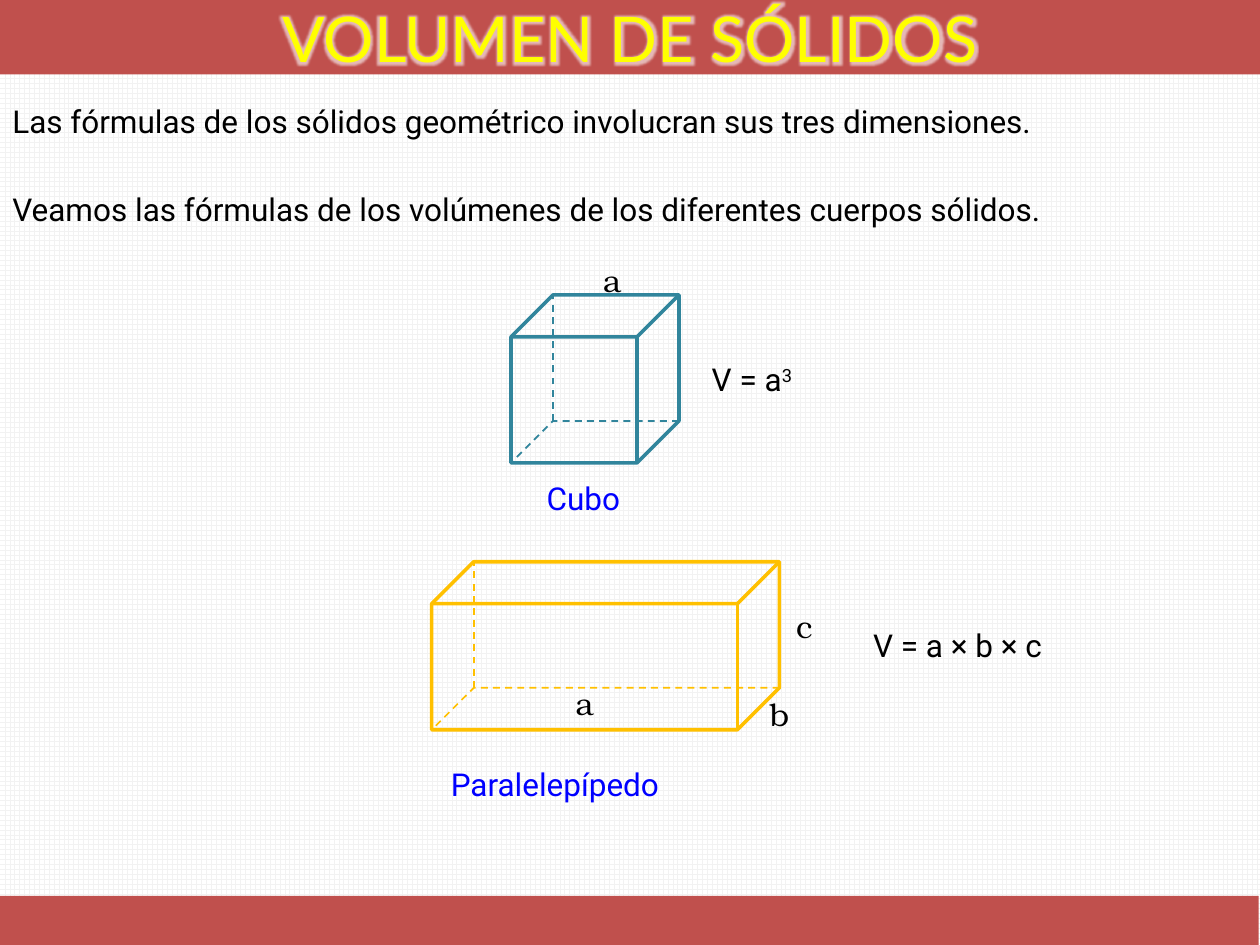
from lxml import etree
from pptx import Presentation
from pptx.dml.color import RGBColor
from pptx.enum import dml, shapes, text
from pptx.oxml import ns
from pptx.util import Pt

HUES = {
    "red": "C0504D", "sun": "FFFF00", "ink": "000000", "blue": "0000FF",
    "teal": "31859C", "gold": "FFC000", "grid": "F2F2F2", "white": "FFFFFF",
}
FACES = {"head": "Lato", "main": "Roboto", "math": "TeX Gyre Bonum"}


def hue(name):
    return RGBColor.from_string(HUES[name])


def apply(item, form):
    for key, val in form.items():
        setattr(item, key, val)


def paint(node, name, alpha=None):
    fill = etree.SubElement(node, ns.qn("a:solidFill"))
    tone = etree.SubElement(fill, ns.qn("a:srgbClr"), val=HUES[name])
    if alpha:
        etree.SubElement(tone, ns.qn("a:alpha"), val=alpha)
    return fill


class Page:
    def __init__(self, deck):
        self.slide = deck.slides.add_slide(deck.slide_layouts[6])
        self.home = self.slide.shapes

    def ground(self):
        fill = self.slide.background.fill
        fill.patterned()
        fill.pattern = dml.MSO_PATTERN.LARGE_GRID
        fill.fore_color.rgb = hue("grid")
        fill.back_color.rgb = hue("white")

    def group(self):
        return self.slide.shapes.add_group_shape().shapes

    def run(self, para, words, face="main", tint="ink", size=18):
        run = para.add_run()
        run.text = words
        apply(run.font, {"size": Pt(size), "name": FACES[face]})
        run.font.color.rgb = hue(tint)
        return run

    def band(self, top, wide, high):
        bar = self.home.add_shape(
            shapes.MSO_SHAPE.RECTANGLE, 0, Pt(top), Pt(wide), Pt(high))
        bar.shadow.inherit = False
        bar.fill.solid()
        bar.fill.fore_color.rgb = hue("red")
        bar.line.fill.background()
        return bar

    def title(self, words, high):
        frame = self.band(0, 720, high).text_frame
        frame.vertical_anchor = text.MSO_ANCHOR.MIDDLE
        para = frame.paragraphs[0]
        para.alignment = text.PP_ALIGN.CENTER
        prop = self.run(para, words, "head", "sun", 36)._r.get_or_add_rPr()
        edge = etree.Element(ns.qn("a:ln"), w=str(Pt(0.75)))
        paint(edge, "ink")
        prop.insert(0, edge)
        halo = etree.Element(ns.qn("a:effectLst"))
        glow = etree.SubElement(halo, ns.qn("a:glow"), rad=str(Pt(5)))
        tone = paint(glow, "white", "60000")
        glow.replace(tone, tone[0])
        prop.find(ns.qn("a:solidFill")).addnext(halo)

    def label(self, words, left, top, wide, high=29, wrap=False,
              align=None, power=None, home=None, **look):
        box = (home or self.home).add_textbox(
            Pt(left), Pt(top), Pt(wide), Pt(high))
        apply(box.text_frame, {
            "word_wrap": wrap,
            "auto_size": text.MSO_AUTO_SIZE.SHAPE_TO_FIT_TEXT})
        para = box.text_frame.paragraphs[0]
        para.alignment = align
        self.run(para, words, **look)
        if power:
            run = self.run(para, power, **look)
            run._r.get_or_add_rPr().set("baseline", "30000")

    def solid(self, home, left, top, wide, high, tint):
        dash = dml.MSO_LINE.DASH
        for form, turn in (({"width": Pt(2)}, 0),
                           ({"width": Pt(1), "dash_style": dash}, 180)):
            cube = home.add_shape(
                shapes.MSO_SHAPE.CUBE, Pt(left), Pt(top), Pt(wide), Pt(high))
            cube.shadow.inherit = False
            cube.rotation = turn
            cube.fill.background()
            cube.line.color.rgb = hue(tint)
            apply(cube.line, form)


def main():
    deck = Presentation()
    apply(deck, {"slide_width": Pt(720), "slide_height": Pt(540)})
    page = Page(deck)
    page.ground()
    page.title("VOLUMEN DE SÓLIDOS", 42.5)
    page.band(512, 719.3, 28)

    page.label("Las fórmulas de los sólidos geométrico involucran sus tres "
               "dimensiones.", 0, 54.5, 720, 51, wrap=True,
               align=text.PP_ALIGN.JUSTIFY)
    page.label("Veamos las fórmulas de los volúmenes de los diferentes "
               "cuerpos sólidos.", 0, 105.3, 720, 51, wrap=True)

    page.label("Cubo", 305.3, 270, 69, tint="blue")
    cube = page.group()
    page.solid(cube, 292, 168.5, 96, 96, "teal")
    page.label("a", 337.5, 145.5, 26, home=cube, face="math")
    page.label("V = a", 399.6, 202.3, 80.6, power="3")

    page.label("Paralelepípedo", 250.5, 433.5, 192, tint="blue")
    prism = page.group()
    page.solid(prism, 246.7, 321, 198.7, 96, "gold")
    for side, left, top in (("a", 321.8, 387.4), ("b", 432.7, 393.8),
                            ("c", 447.8, 343.4)):
        page.label(side, left, top, 26, home=prism, face="math")
    page.label("V = a × b × c", 491.8, 354.2, 147)

    deck.save("out.pptx")


if __name__ == "__main__":
    main()
